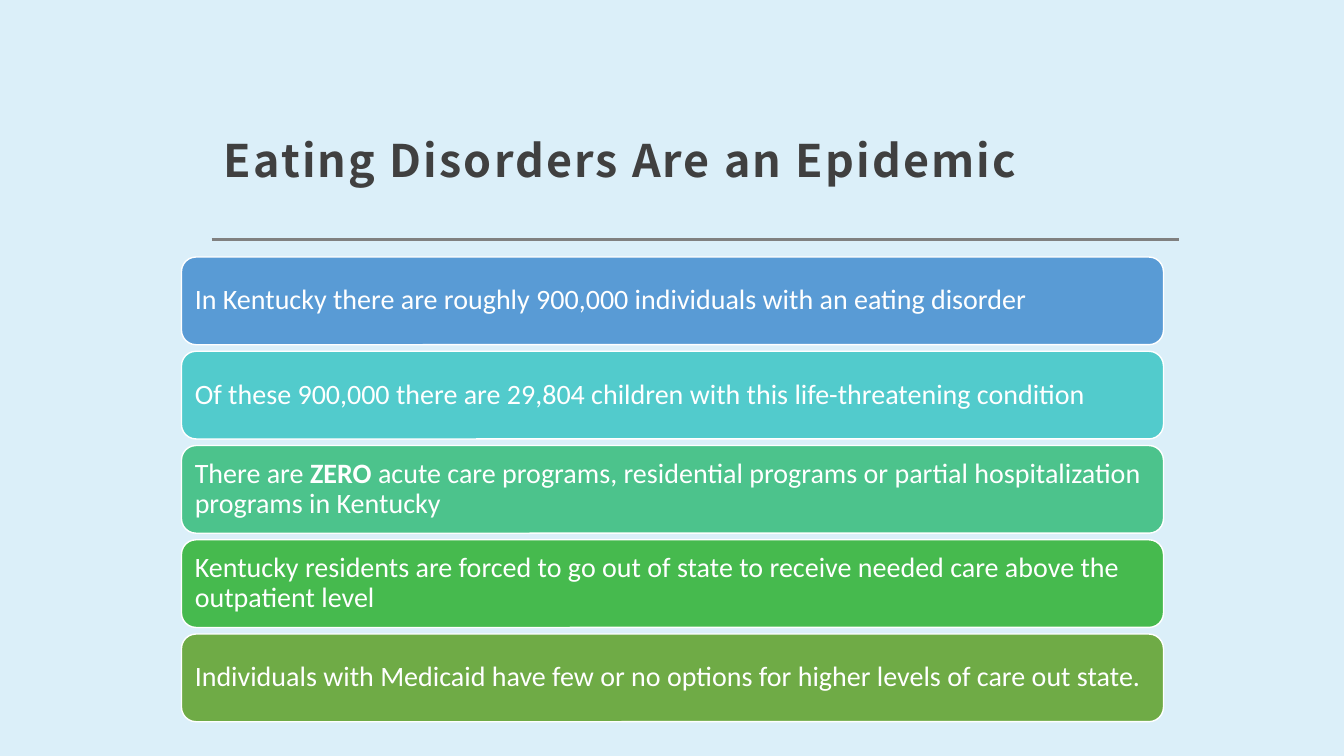
from lxml import etree
from pptx import Presentation
from pptx import util as u
from pptx.dml import color
from pptx.enum import shapes, text
from pptx.oxml import ns

FACTS = [
    ("599BD5", [("In Kentucky there are roughly 900,000 individuals with an eating disorder", False)]),
    ("52CBCC", [("Of these 900,000 there are 29,804 children with this life-threatening condition", False)]),
    ("4CC38C", [("There are ", False), ("ZERO ", True),
                ("acute care programs, residential programs or partial hospitalization "
                 "programs in Kentucky", False)]),
    ("46BA4E", [("Kentucky residents are forced to go out of state to receive needed care "
                 "above the outpatient level", False)]),
    ("6FAB46", [("Individuals with Medicaid have few or no options for higher levels of care "
                 "out state.", False)]),
]


def rgb(value):
    """Turn a hex string into a colour."""
    return color.RGBColor.from_string(value)


def set_frame(tf, inset, anchor):
    """Set wrapping, equal insets and the vertical anchor of a text frame."""
    tf.word_wrap = True
    tf.margin_left = tf.margin_right = tf.margin_top = tf.margin_bottom = u.Inches(inset)
    tf.vertical_anchor = anchor


def style_run(r, font, size, fill, bold):
    """Set the font of a run."""
    r.font.name = font
    r.font.size = u.Pt(size)
    r.font.color.rgb = rgb(fill)
    r.font.bold = bold


def add_title(s, x, y, w, h):
    """Place the heading, with the rule below it."""
    rule_y = u.Inches(y + h + 0.43)
    rule = s.shapes.add_connector(shapes.MSO_CONNECTOR.STRAIGHT,
                                  u.Inches(x), rule_y, u.Inches(x + w), rule_y)
    rule.line.color.rgb = rgb("808080")
    rule.line.width = u.Pt(2)
    etree.SubElement(rule._element.spPr, ns.qn("a:effectLst"))

    sp = s.shapes.add_textbox(u.Inches(x), u.Inches(y), u.Inches(w), u.Inches(h))
    tf = sp.text_frame
    set_frame(tf, 0.12, text.MSO_ANCHOR.BOTTOM)
    tf.margin_bottom = u.Inches(0.1)
    p = tf.paragraphs[0]
    p.text = "Eating Disorders Are an Epidemic"
    p.line_spacing = 1.3
    r = p.runs[0]
    style_run(r, "Noto Sans CJK JP", 32, "404040", True)
    r._r.get_or_add_rPr().set("spc", "150")


def add_fact(s, x, y, w, h, fill, parts):
    """Place one rounded bar with its statement."""
    sp = s.shapes.add_shape(shapes.MSO_SHAPE.ROUNDED_RECTANGLE,
                            u.Inches(x), u.Inches(y), u.Inches(w), u.Inches(h))
    sp.shadow.inherit = False
    sp.fill.solid()
    sp.fill.fore_color.rgb = rgb(fill)
    sp.line.color.rgb = rgb("FFFFFF")
    sp.line.width = u.Pt(1)
    set_frame(sp.text_frame, 0.09, text.MSO_ANCHOR.MIDDLE)
    p = sp.text_frame.paragraphs[0]
    p.alignment = text.PP_ALIGN.LEFT
    p.line_spacing = 0.9
    for words, bold in parts:
        r = p.add_run()
        r.text = words
        style_run(r, "Calibri", 20, "FFFFFF", bold)


def add_facts(s, x, y, w, h):
    """Stack the statements evenly in the box."""
    bar_h = 0.87
    step = (h - bar_h) / (len(FACTS) - 1)
    for i, (fill, parts) in enumerate(FACTS):
        add_fact(s, x, y + i * step, w, bar_h, fill, parts)


def main():
    """Build the slide and save it."""
    prs = Presentation()
    prs.slide_width, prs.slide_height = u.Inches(13.33), u.Inches(7.5)
    s = prs.slides.add_slide(prs.slide_layouts[6])
    s.background.fill.solid()
    s.background.fill.fore_color.rgb = rgb("DBEFF9")
    add_title(s, 2.1, 0.48, 9.59, 1.47)
    add_facts(s, 1.8, 2.55, 9.74, 4.61)
    prs.save("out.pptx")


if __name__ == "__main__":
    main()
